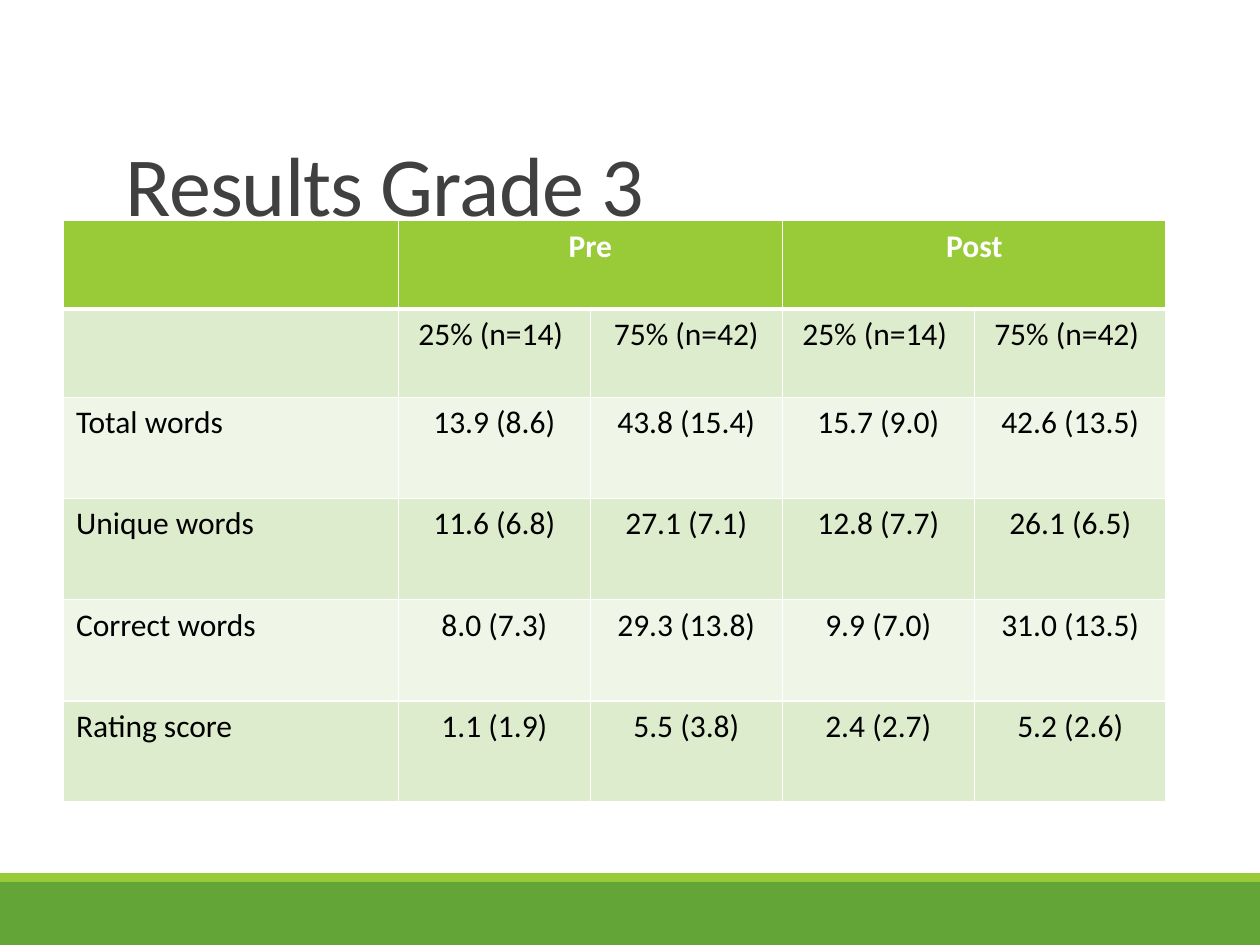
import pptx
import pptx.dml.color
import pptx.enum.shapes
import pptx.enum.text
import pptx.oxml
import pptx.oxml.ns
import pptx.util

Cm = pptx.util.Cm
Pt = pptx.util.Pt
CENTER = pptx.enum.text.PP_ALIGN.CENTER
LIME, GREEN, WHITE = "99CB38", "63A537", "FFFFFF"
BANDS = ("EFF6E8", "DEECCE")
TITLE_FONT = {"name": "Calibri", "size": Pt(48)}
HEAD_FONT = {"name": "Calibri", "size": Pt(18), "bold": True}
BODY_FONT = {**HEAD_FONT, "bold": False}
ROWS = [
    ("", "Pre", "", "Post", ""),
    ("", "25% (n=14) ", "75% (n=42)", "25% (n=14) ", "75% (n=42) "),
    ("Total words", "13.9 (8.6)", "43.8 (15.4)", "15.7 (9.0)", "42.6 (13.5)"),
    ("Unique words", "11.6 (6.8)", "27.1 (7.1)", "12.8 (7.7)", "26.1 (6.5)"),
    ("Correct words", "8.0 (7.3)", "29.3 (13.8)", "9.9 (7.0)", "31.0 (13.5)"),
    ("Rating score", "1.1 (1.9)", "5.5 (3.8)", "2.4 (2.7)", "5.2 (2.6)"),
]


def rgb(value):
    """Turn a hex string into a colour."""
    return pptx.dml.color.RGBColor.from_string(value)


def paint(fill, color):
    """Give a fill one solid colour."""
    fill.solid()
    fill.fore_color.rgb = rgb(color)


def write(p, text, color, font):
    """Add a formatted run to a paragraph and return it."""
    r = p.add_run()
    r.text = text
    for name, value in font.items():
        setattr(r.font, name, value)
    r.font.color.rgb = rgb(color)
    return r


def set_borders(cell, bottom):
    """Draw white borders round a cell, with the given bottom width."""
    tc_pr = cell._tc.get_or_add_tcPr()
    for side, width in {"L": 1, "R": 1, "T": 1, "B": bottom}.items():
        tc_pr.append(pptx.oxml.parse_xml(
            f'<a:ln{side} {pptx.oxml.ns.nsdecls("a")} w="{Pt(width)}"><a:solidFill>'
            f'<a:srgbClr val="{WHITE}"/></a:solidFill></a:ln{side}>'))


def add_footer(s, left, top, width, height):
    """Draw the green footer with a lime strip along its top."""
    strip = Cm(0.18)
    for y, h, color in ((top + strip, height - strip, GREEN), (top, strip, LIME)):
        sp = s.shapes.add_shape(
            pptx.enum.shapes.MSO_SHAPE.RECTANGLE, left, y, width, h)
        sp.shadow.inherit = False
        paint(sp.fill, color)
        sp.line.fill.background()


def add_title(s, left, top, width, height):
    """Place the slide title at the bottom of its box."""
    tf = s.shapes.add_textbox(left, top, width, height).text_frame
    tf.word_wrap = True
    tf.vertical_anchor = pptx.enum.text.MSO_ANCHOR.BOTTOM
    p = tf.paragraphs[0]
    p.line_spacing = 0.85
    r = write(p, "Results Grade 3", "404040", TITLE_FONT)
    r._r.get_or_add_rPr().set("spc", "-50")


def add_results(s, left, top, width, height):
    """Fill the box with the pre and post results table."""
    table = s.shapes.add_table(
        len(ROWS), len(ROWS[0]), left, top, width, height).table
    label_width, head_height = Cm(6.75), Cm(1.78)
    for j, column in enumerate(table.columns):
        column.width = label_width if j == 0 else (width - label_width) // 4
    for i, row in enumerate(table.rows):
        row.height = head_height if i < 2 else (height - 2 * head_height) // 4
    for i, texts in enumerate(ROWS):
        head = i == 0
        for j, text in enumerate(texts):
            cell = table.cell(i, j)
            set_borders(cell, 3 if head else 1)
            paint(cell.fill, LIME if head else BANDS[i % 2])
            p = cell.text_frame.paragraphs[0]
            if j:
                p.alignment = CENTER
            if text:
                write(p, text, WHITE if head else "000000",
                      HEAD_FONT if head else BODY_FONT)
    for j in (1, 3):
        table.cell(0, j).merge(table.cell(0, j + 1))


def main():
    """Build the slide and save it."""
    prs = pptx.Presentation()
    prs.slide_width, prs.slide_height = Cm(25.4), Cm(19.05)
    s = prs.slides.add_slide(prs.slide_layouts[6])
    add_footer(s, 0, Cm(17.6), prs.slide_width, Cm(1.45))
    add_title(s, Cm(2.29), Cm(0.79), Cm(20.95), Cm(4.04))
    add_results(s, Cm(1.28), Cm(4.45), Cm(22.23), Cm(11.72))
    prs.save("out.pptx")


if __name__ == "__main__":
    main()
